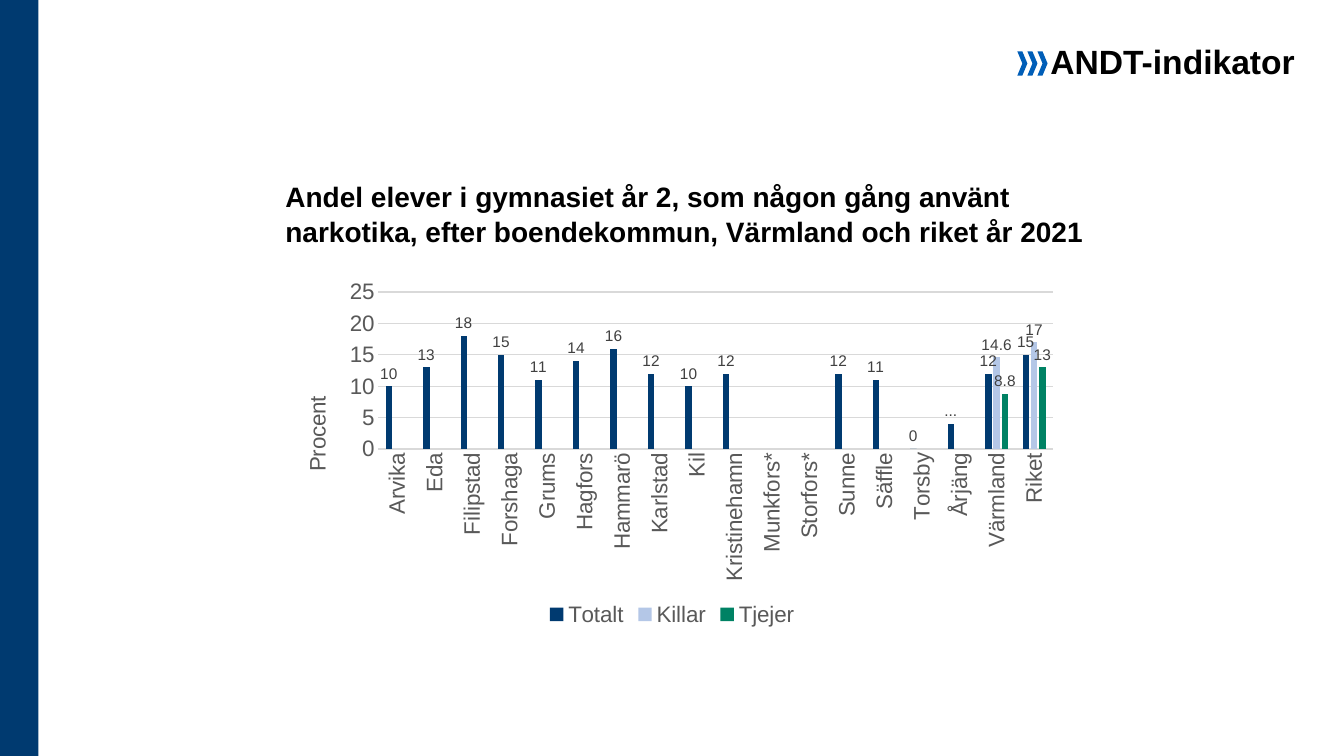
from lxml import etree
from pptx import Presentation
from pptx.chart.data import CategoryChartData
from pptx.dml.color import RGBColor
from pptx.enum import chart as charts, shapes, text
from pptx.oxml import ns
from pptx.util import Inches, Pt

NAVY = RGBColor(0x00, 0x3A, 0x70)
BLUE = RGBColor(0x00, 0x5E, 0xB8)
LIGHT_BLUE = RGBColor(0xB4, 0xC7, 0xE7)
GREEN = RGBColor(0x00, 0x82, 0x64)
BLACK = RGBColor(0, 0, 0)
DARK_GREY = RGBColor(0x40, 0x40, 0x40)
GREY = RGBColor(0x59, 0x59, 0x59)
LINE_GREY = RGBColor(0xD9, 0xD9, 0xD9)

TITLE = ("Andel elever i gymnasiet år 2, som någon gång använt narkotika, "
         "efter boendekommun, Värmland och riket år 2021")
TAG = "ANDT-indikator"
AXIS_TITLE = "Procent"
RESULTS = [
    ("Arvika", 10), ("Eda", 13), ("Filipstad", 18), ("Forshaga", 15),
    ("Grums", 11), ("Hagfors", 14), ("Hammarö", 16), ("Karlstad", 12),
    ("Kil", 10), ("Kristinehamn", 12), ("Munkfors*", None),
    ("Storfors*", None), ("Sunne", 12), ("Säffle", 11), ("Torsby", 0),
    ("Årjäng", 4), ("Värmland", 12, 14.6, 8.8), ("Riket", 15, 17, 13),
]
SERIES = [("Totalt", NAVY, "0"), ("Killar", LIGHT_BLUE, "General"),
          ("Tjejer", GREEN, "General")]
HIDDEN_VALUE = ("Årjäng", "...")
PLOT_LAYOUT = {"layoutTarget": "inner", "xMode": "edge", "yMode": "edge",
               "x": 0.13, "y": 0.05, "w": 0.85, "h": 0.44}
AXIS_TITLE_LAYOUT = {"xMode": "edge", "yMode": "edge", "x": 0.03, "y": 0.33}


def set_font(font, size, color, bold=False):
    """Apply the slide typeface with a size, colour and weight."""
    font.name, font.size, font.bold = "Arial", Pt(size), bold
    font.color.rgb = color


def add_block(slide, preset, left, top, width, height, color):
    """Add a plain filled shape."""
    shape = slide.shapes.add_shape(
        preset, Inches(left), Inches(top), Inches(width), Inches(height))
    shape.shadow.inherit = False
    shape.fill.solid()
    shape.fill.fore_color.rgb = color
    shape.line.fill.background()


def set_layout(element, settings, position):
    """Give a chart element a manual layout."""
    for old in element.findall(ns.qn("c:layout")):
        element.remove(old)
    layout = etree.Element(ns.qn("c:layout"))
    manual = etree.SubElement(layout, ns.qn("c:manualLayout"))
    for name, value in settings.items():
        etree.SubElement(manual, ns.qn(f"c:{name}")).set("val", str(value))
    element.insert(position, layout)


def add_title(slide):
    """Place and format the slide title."""
    title = slide.shapes.title
    title.left, title.top = Inches(2.73), Inches(1.06)
    title.width, title.height = Inches(8.14), Inches(1.45)
    frame = title.text_frame
    frame.text = TITLE
    frame.word_wrap = True
    frame.auto_size = text.MSO_AUTO_SIZE.NONE
    frame.vertical_anchor = text.MSO_ANCHOR.BOTTOM
    paragraph = frame.paragraphs[0]
    paragraph.alignment = text.PP_ALIGN.LEFT
    paragraph.line_spacing = 1.05
    set_font(paragraph.font, 20, BLACK, True)


def add_tag(slide):
    """Add the indicator tag and its chevrons."""
    box = slide.shapes.add_textbox(
        Inches(10.31), Inches(0.36), Inches(2.64), Inches(0.38))
    box.text_frame.text = TAG
    box.text_frame.word_wrap = False
    paragraph = box.text_frame.paragraphs[0]
    paragraph.alignment = text.PP_ALIGN.CENTER
    set_font(paragraph.font, 24, BLACK, True)
    for index in range(3):
        add_block(slide, shapes.MSO_SHAPE.CHEVRON,
                  10.09 + 0.1 * index, 0.51, 0.1, 0.24, BLUE)


def format_axes(chart):
    """Format both axes, the gridlines and the axis title."""
    category_axis, value_axis = chart.category_axis, chart.value_axis
    for axis in (category_axis, value_axis):
        axis.major_tick_mark = charts.XL_TICK_MARK.NONE
        axis.minor_tick_mark = charts.XL_TICK_MARK.NONE
        set_font(axis.tick_labels.font, 16, GREY)
    body = category_axis._element.find(
        f"{ns.qn('c:txPr')}/{ns.qn('a:bodyPr')}")
    body.set("rot", "-5400000")
    body.set("vert", "horz")
    value_axis.minimum_scale, value_axis.maximum_scale = 0, 25
    value_axis.major_unit = 5
    value_axis.tick_labels.number_format = "0"
    value_axis.tick_labels.number_format_is_linked = False
    value_axis.format.line.fill.background()
    for line in (category_axis.format.line,
                 value_axis.major_gridlines.format.line):
        line.color.rgb = LINE_GREY
        line.width = Pt(0.75)
    axis_title = value_axis.axis_title
    axis_title.text_frame.text = AXIS_TITLE
    set_font(axis_title.text_frame.paragraphs[0].font, 16, GREY)
    body = axis_title.text_frame._txBody.find(ns.qn("a:bodyPr"))
    body.set("rot", "-5400000")
    body.set("vert", "horz")
    set_layout(axis_title._element, AXIS_TITLE_LAYOUT, 1)


def format_series(plot, categories):
    """Colour the series and add their value labels."""
    outside = charts.XL_LABEL_POSITION.OUTSIDE_END
    for series, (_, color, number_format) in zip(plot.series, SERIES):
        series.format.fill.solid()
        series.format.fill.fore_color.rgb = color
        series.invert_if_negative = False
        labels = series.data_labels
        labels.show_value = True
        labels.number_format = number_format
        labels.number_format_is_linked = False
        labels.position = outside
        set_font(labels.font, 11, DARK_GREY)
    place, label_text = HIDDEN_VALUE
    label = plot.series[0].points[categories.index(place)].data_label
    label.text_frame.text = label_text
    set_font(label.text_frame.paragraphs[0].font, 11, DARK_GREY)
    label.position = outside


def add_results_chart(slide):
    """Add the clustered columns for all municipalities."""
    categories = [row[0] for row in RESULTS]
    data = CategoryChartData()
    data.categories = categories
    for column, (name, _, _) in enumerate(SERIES, 1):
        data.add_series(name, [row[column] if column < len(row) else None
                               for row in RESULTS])
    chart = slide.shapes.add_chart(
        charts.XL_CHART_TYPE.COLUMN_CLUSTERED, Inches(2.73), Inches(2.72),
        Inches(7.87), Inches(3.54), data).chart
    set_font(chart.font, 16, BLACK)
    chart.has_title = False
    chart.has_legend = True
    chart.legend.position = charts.XL_LEGEND_POSITION.BOTTOM
    chart.legend.include_in_layout = False
    set_font(chart.legend.font, 16, GREY)
    plot = chart.plots[0]
    plot.vary_by_categories = False
    plot.gap_width, plot.overlap = 219, -27
    format_axes(chart)
    format_series(plot, categories)
    set_layout(chart._chartSpace.chart.plotArea, PLOT_LAYOUT, 0)


def main():
    """Build the slide and save it."""
    presentation = Presentation()
    presentation.slide_width = Inches(13.33)
    presentation.slide_height = Inches(7.5)
    slide = presentation.slides.add_slide(presentation.slide_layouts[5])
    add_block(slide, shapes.MSO_SHAPE.RECTANGLE, 0, 0, 0.38, 7.5, NAVY)
    add_title(slide)
    add_tag(slide)
    add_results_chart(slide)
    presentation.save("out.pptx")


if __name__ == "__main__":
    main()
